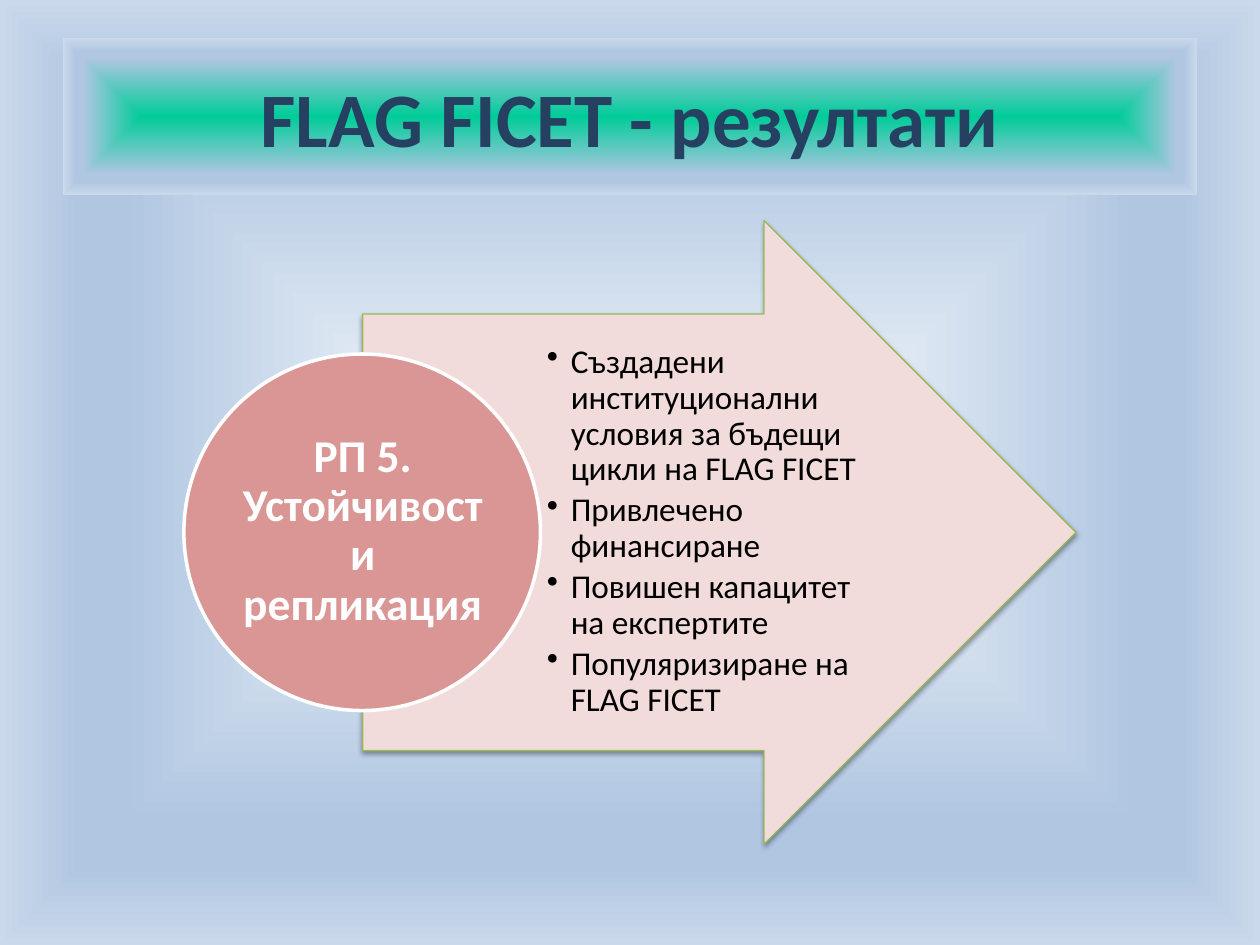
import pptx
import pptx.util
import pptx.dml.color
import pptx.enum.shapes
import pptx.enum.text
import pptx.oxml
import pptx.oxml.ns
from dataclasses import dataclass

Pt = pptx.util.Pt
Kind = pptx.enum.shapes.MSO_SHAPE
Align = pptx.enum.text.PP_ALIGN
NS = pptx.oxml.ns.nsdecls("a")
qn = pptx.oxml.ns.qn


@dataclass
class Theme:
    font: str = "Calibri"
    head: int = 44
    label: int = 26
    body: int = 19
    navy: str = "254061"
    white: str = "FFFFFF"
    black: str = "000000"
    pink: str = "F2DCDB"
    rose: str = "D99694"
    lime: str = "98B955"
    pale: str = "F6F9FC"
    green: str = "00CC99"
    rim: tuple = ((74, "B0C6E1"), (83, "B0C6E1"), (100, "CAD9EB"))


def tint(code):
    return pptx.dml.color.RGBColor.from_string(code)


class Board:
    cols, rows = 100, 75

    def __init__(self, deck, theme):
        self.theme = theme
        self.slide = deck.slides.add_slide(deck.slide_layouts[6])
        self.dx = deck.slide_width / self.cols
        self.dy = deck.slide_height / self.rows

    def area(self, x, y, w, h):
        return [round(n) for n in (x * self.dx, y * self.dy, w * self.dx, h * self.dy)]

    def glow(self, fill, root, core):
        fill.gradient()
        grad = next(root.iter(qn("a:gradFill")))
        stops = "".join(
            f'<a:gs pos="{pos * 1000}"><a:srgbClr val="{code}"/></a:gs>'
            for pos, code in ((0, core), *self.theme.rim)
        )
        grad.getparent().replace(grad, pptx.oxml.parse_xml(
            f'<a:gradFill {NS} rotWithShape="1"><a:gsLst>{stops}</a:gsLst>'
            '<a:path path="shape"><a:fillToRect l="50000" t="50000" r="50000" b="50000"/>'
            "</a:path></a:gradFill>"
        ))

    def ground(self, core):
        self.glow(self.slide.background.fill, self.slide.element, core)

    def shape(self, kind, box, fill=None, line=None, width=1):
        item = self.slide.shapes.add_shape(kind, *self.area(*box))
        item.shadow.inherit = False
        if fill:
            item.fill.solid()
            item.fill.fore_color.rgb = tint(fill)
        if line:
            item.line.color.rgb = tint(line)
            item.line.width = Pt(width)
        else:
            item.line.fill.background()
        return item

    def arrow(self, box, fill, line):
        item = self.shape(Kind.RIGHT_ARROW, box, fill, line, 0.75)
        item.adjustments[0], item.adjustments[1] = 0.7, 0.5
        next(item.element.iter(qn("a:effectLst"))).append(pptx.oxml.parse_xml(
            f'<a:outerShdw {NS} blurRad="{Pt(3.1)}" dist="{Pt(1.6)}" dir="5400000" rotWithShape="0">'
            f'<a:srgbClr val="{self.theme.black}"><a:alpha val="38000"/></a:srgbClr></a:outerShdw>'
        ))

    def label(self, item, text, size, color, bold=False, align=Align.CENTER):
        frame = item.text_frame
        frame.text = text
        frame.word_wrap = True
        frame.vertical_anchor = pptx.enum.text.MSO_ANCHOR.MIDDLE
        for para in frame.paragraphs:
            para.alignment = align
            for run in para.runs:
                run.font.name = self.theme.font
                run.font.size = Pt(size)
                run.font.bold = bold
                run.font.color.rgb = tint(color)
        return frame

    def title(self, box, text):
        item = self.shape(Kind.RECTANGLE, box)
        self.glow(item.fill, item.element, self.theme.green)
        self.label(item, text, self.theme.head, self.theme.navy, True)

    def text(self, box, text, size, color, pad, gap, **look):
        item = self.slide.shapes.add_textbox(*self.area(*box))
        frame = self.label(item, text, size, color, **look)
        inset = [pptx.util.Inches(inch) for inch in pad]
        frame.margin_left, frame.margin_top, frame.margin_right, frame.margin_bottom = inset
        for para in frame.paragraphs:
            para.line_spacing = 0.9
            para.space_after = Pt(round(size * gap, 1))
        return frame

    def list(self, box, lines):
        frame = self.text(box, "\n".join(lines), self.theme.body, self.theme.black,
                          (0.05, 0.01, 0.03, 0.01), 0.15, align=Align.LEFT)
        hang = pptx.util.Inches(0.19)
        for para in frame.paragraphs:
            props = para._p.get_or_add_pPr()
            props.set("marL", str(hang))
            props.set("indent", str(-hang))
            props.append(pptx.oxml.parse_xml(f'<a:buChar {NS} char="•"/>'))


def main():
    deck = pptx.Presentation()
    deck.slide_width = pptx.util.Inches(10)
    deck.slide_height = pptx.util.Inches(7.5)
    theme = Theme()
    board = Board(deck, theme)
    board.ground(theme.pale)
    board.arrow((28.8, 17.5, 56.6, 49.5), theme.pink, theme.lime)
    board.list((42.9, 24.9, 27.6, 34.6), [
        "Създадени институционални условия за бъдещи цикли на FLAG FICET",
        "Привлечено финансиране",
        "Повишен капацитет на експертите",
        "Популяризиране на FLAG FICET",
    ])
    board.shape(Kind.OVAL, (14.6, 28.1, 28.3, 28.3), theme.rose, theme.white, 2)
    board.text((18.8, 32.2, 20, 20), "РП 5. Устойчивост и репликация",
               theme.label, theme.white, (0.02,) * 4, 0.35, bold=True)
    board.title((5, 3, 90, 12.5), "FLAG FICET - резултати")
    deck.save("out.pptx")


if __name__ == "__main__":
    main()
